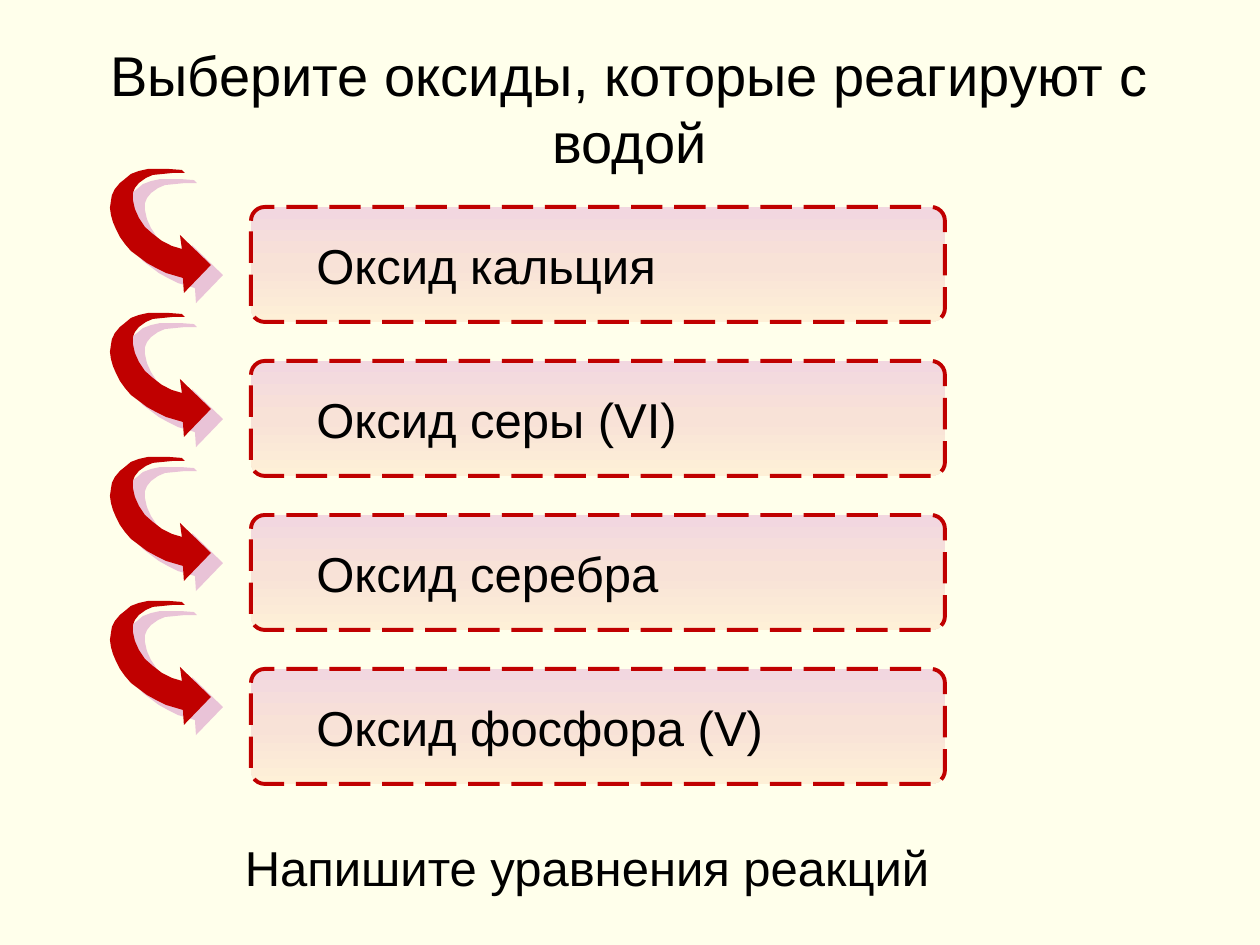
from copy import deepcopy

from lxml import etree
from pptx import Presentation
from pptx import util as u
from pptx.dml.color import RGBColor
from pptx.enum import dml, shapes, text
from pptx.oxml import ns

PX = u.Inches(1) // 126
BLACK = RGBColor(0x00, 0x00, 0x00)
RED = RGBColor(0xC0, 0x00, 0x00)
CREAM = RGBColor(0xFF, 0xFF, 0xEB)
MAUVE = RGBColor(0xD4, 0x88, 0xC5)
BOX_COLOURS = (
    RGBColor(0xF2, 0xD7, 0xE0),
    RGBColor(0xF8, 0xE2, 0xD7),
    RGBColor(0xFE, 0xF0, 0xD7),
)
OXIDES = ("Оксид кальция", "Оксид серы (VI)", "Оксид серебра", "Оксид фосфора (V)")
ARROW = (
    (72, 1), (59, 0), (48, 0), (38, 0), (29, 2), (21, 5), (15, 10),
    (10, 14), (5, 20), (2, 26), (1, 32), (0, 39), (1, 46), (3, 53),
    (6, 60), (10, 68), (15, 75), (21, 82), (29, 88), (37, 94), (46, 99),
    (56, 104), (73, 109), (74, 124), (101, 96), (70, 66), (72, 80),
    (62, 77), (52, 72), (43, 65), (35, 58), (29, 49), (25, 40), (23, 31),
    (23, 24), (25, 19), (29, 14), (36, 9), (43, 6), (53, 5), (63, 4), (75, 4),
)


def write(shape, words, size=28, align=text.PP_ALIGN.CENTER, indent=0, wrap=True):
    frame = shape.text_frame
    frame.auto_size = text.MSO_AUTO_SIZE.NONE
    frame.word_wrap = wrap
    frame.vertical_anchor = text.MSO_ANCHOR.MIDDLE
    para = frame.paragraphs[0]
    para.alignment = align
    if indent:
        properties = para._p.get_or_add_pPr()
        properties.set("marL", "0")
        properties.set("indent", str(indent * PX))
    span = para.add_run()
    span.text = words
    span.font.name = "Arial"
    span.font.size = u.Pt(size)
    span.font.color.rgb = BLACK


def paint_gradient(shape, colours):
    shape.fill.gradient()
    shape.fill.gradient_angle = 270
    first = shape._element.spPr.find(".//" + ns.qn("a:gs"))
    first.addnext(deepcopy(first))
    for index, (stop, colour) in enumerate(zip(shape.fill.gradient_stops, colours)):
        stop.position = index / (len(colours) - 1)
        stop.color.rgb = colour


def add_shadow(shape, colour, points, degrees, opacity):
    effects = etree.SubElement(shape._element.spPr, ns.qn("a:effectLst"))
    shadow = etree.SubElement(
        effects, ns.qn("a:outerShdw"), blurRad="0", dist=str(u.Pt(points)),
        dir=str(degrees * 60000), algn="ctr", rotWithShape="0")
    tint = etree.SubElement(shadow, ns.qn("a:srgbClr"), val=str(colour))
    etree.SubElement(tint, ns.qn("a:alpha"), val=str(opacity * 1000))


def add_title(page, left, top, width, height):
    title = page.shapes.title
    title.left, title.top = left * PX, top * PX
    title.width, title.height = width * PX, height * PX
    write(title, "Выберите оксиды, которые реагируют с водой", size=32)


def add_oxides(page, left, top, width, height, pitch):
    for row, words in enumerate(OXIDES):
        box = page.shapes.add_shape(
            shapes.MSO_SHAPE.ROUNDED_RECTANGLE,
            left * PX, (top + row * pitch) * PX, width * PX, height * PX)
        box.adjustments[0] = 0.12
        box.shadow.inherit = False
        paint_gradient(box, BOX_COLOURS)
        box.line.color.rgb = RED
        box.line.width = u.Pt(2.25)
        box.line.dash_style = dml.MSO_LINE.LONG_DASH
        write(box, words, align=text.PP_ALIGN.LEFT, indent=49, wrap=False)


def add_arrows(page, left, top, pitch):
    for row in range(len(OXIDES)):
        points = [(left + x, top + row * pitch + y) for x, y in ARROW]
        builder = page.shapes.build_freeform(*points[0], scale=PX)
        builder.add_line_segments(points[1:], close=True)
        arrow = builder.convert_to_shape()
        arrow.fill.solid()
        arrow.fill.fore_color.rgb = RED
        arrow.line.fill.background()
        add_shadow(arrow, MAUVE, points=9, degrees=40, opacity=50)


def add_task(page, left, top, width, height):
    box = page.shapes.add_textbox(left * PX, top * PX, width * PX, height * PX)
    write(box, "Напишите уравнения реакций")


def main():
    deck = Presentation()
    deck.slide_width, deck.slide_height = 1260 * PX, 945 * PX
    page = deck.slides.add_slide(deck.slide_layouts[5])
    page.background.fill.solid()
    page.background.fill.fore_color.rgb = CREAM
    add_title(page, 70, 29, 1119, 157)
    add_task(page, 20, 788, 1134, 157)
    add_oxides(page, 251, 207, 694, 115, pitch=154)
    add_arrows(page, 110, 169, pitch=144)
    deck.save("out.pptx")


if __name__ == "__main__":
    main()
